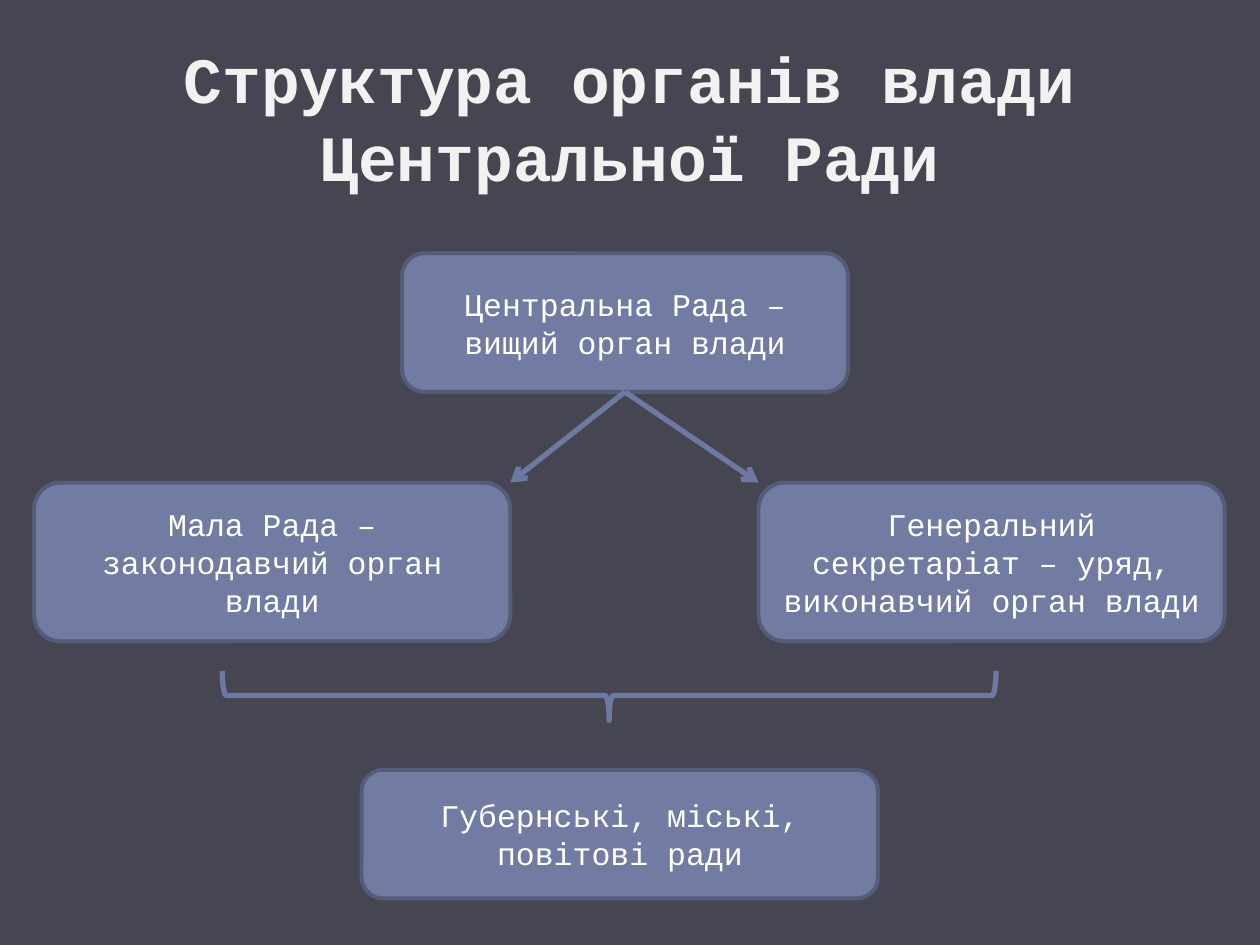
from lxml import etree
from pptx import Presentation
from pptx.dml.color import RGBColor
from pptx.enum.shapes import MSO_CONNECTOR, MSO_SHAPE
from pptx.enum.text import MSO_ANCHOR, PP_ALIGN
from pptx.oxml.ns import qn
from pptx.util import Inches, Pt

ROUNDED, BRACE = MSO_SHAPE.ROUNDED_RECTANGLE, MSO_SHAPE.LEFT_BRACE
STRAIGHT = MSO_CONNECTOR.STRAIGHT
MIDDLE, CENTER = MSO_ANCHOR.MIDDLE, PP_ALIGN.CENTER
BOTTOM_SIDE = 2

FONT = "Courier New"
COLORS = {"bg": "464653", "title": "F2F2F2", "text": "FFFFFF",
          "box": "727CA3", "border": "545C79", "link": "6E79A1"}

TITLE = ("Структура органів влади Центральної Ради", (5, 4, 90, 16.67))
BOXES = {
    "council": ("Центральна Рада – вищий орган влади", (31.9, 26.8, 35.4, 14.67)),
    "small_council": ("Мала Рада – законодавчий орган влади", (2.7, 51.07, 37.8, 16.8)),
    "secretariat": ("Генеральний секретаріат – уряд, виконавчий орган влади",
                    (60.2, 51.07, 37, 16.8)),
    "local_councils": ("Губернські, міські, повітові ради", (28.7, 81.47, 41, 13.6)),
}
BRACE_AREA = (46.4, 32.67, 3.9, 81.87)

prs = Presentation()
prs.slide_width, prs.slide_height = Inches(10), Inches(7.5)
W, H = prs.slide_width, prs.slide_height
s = prs.slides.add_slide(prs.slide_layouts[6])


def color(name):
    return RGBColor.from_string(COLORS[name])


def place(area):
    return [round(share * size / 100) for share, size in zip(area, (W, H, W, H))]


def write(sp, text, size, ink, bold=False):
    tf = sp.text_frame
    tf.word_wrap = True
    tf.vertical_anchor = MIDDLE
    p = tf.paragraphs[0]
    p.alignment = CENTER
    r = p.add_run()
    r.text = text
    r.font.name, r.font.size, r.font.bold = FONT, Pt(size), bold
    r.font.color.rgb = color(ink)


def outline(sp, name, width):
    sp.line.color.rgb = color(name)
    sp.line.width = Pt(width)


def add_box(text, area):
    sp = s.shapes.add_shape(ROUNDED, *place(area))
    sp.shadow.inherit = False
    sp.fill.solid()
    sp.fill.fore_color.rgb = color("box")
    outline(sp, "border", 2.25)
    write(sp, text, 18, "text")
    return sp


def add_arrow(source, x, y):
    c = s.shapes.add_connector(STRAIGHT, source.left + source.width // 2,
                               source.top + source.height, x, y)
    c.begin_connect(source, BOTTOM_SIDE)
    outline(c, "link", 3)
    etree.SubElement(c.line._get_or_add_ln(), qn("a:tailEnd"), type="arrow")
    etree.SubElement(c._element.spPr, qn("a:effectLst"))


s.background.fill.solid()
s.background.fill.fore_color.rgb = color("bg")

title, title_area = TITLE
write(s.shapes.add_textbox(*place(title_area)), title, 36.9, "title", True)

boxes = {name: add_box(*content) for name, content in BOXES.items()}
left, right = boxes["small_council"], boxes["secretariat"]
add_arrow(boxes["council"], left.left + left.width, left.top)
add_arrow(boxes["council"], right.left, right.top)

brace = s.shapes.add_shape(BRACE, *place(BRACE_AREA))
brace.rotation = 270
brace.shadow.inherit = False
brace.fill.background()
outline(brace, "link", 3)

prs.save("out.pptx")
